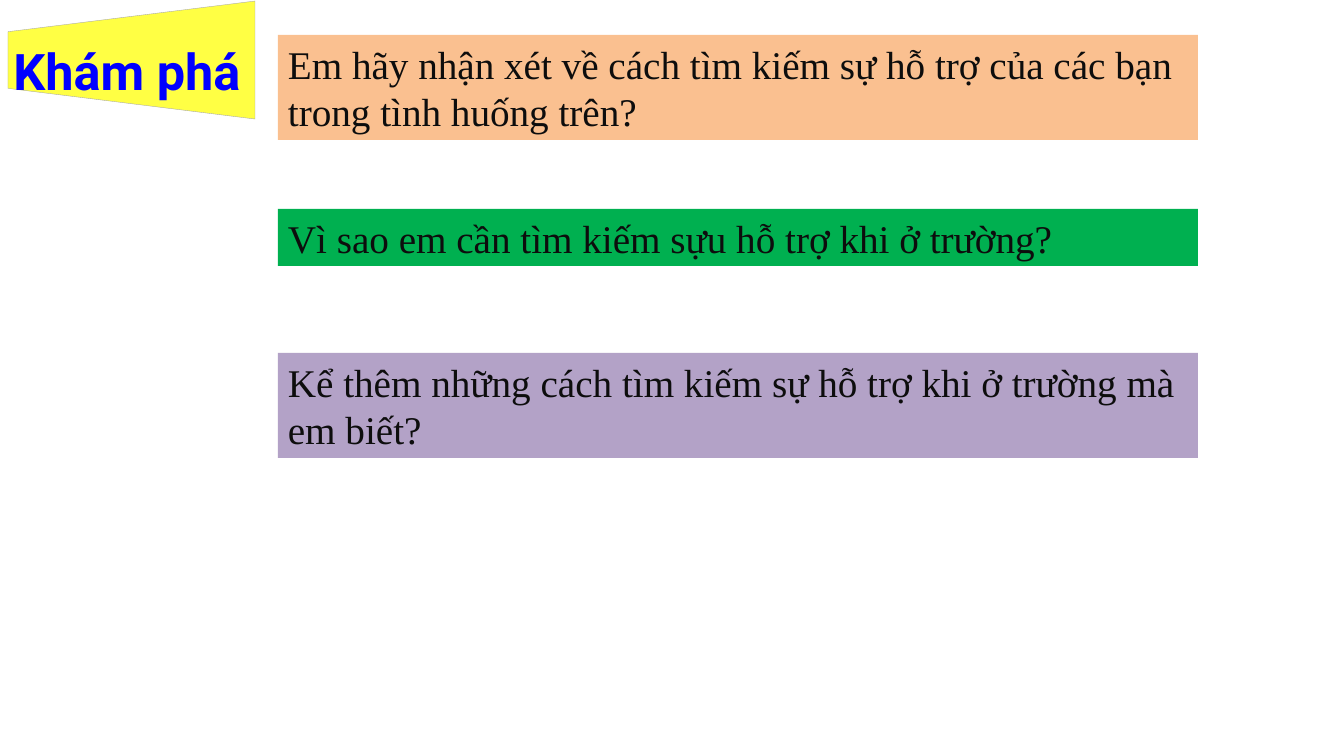
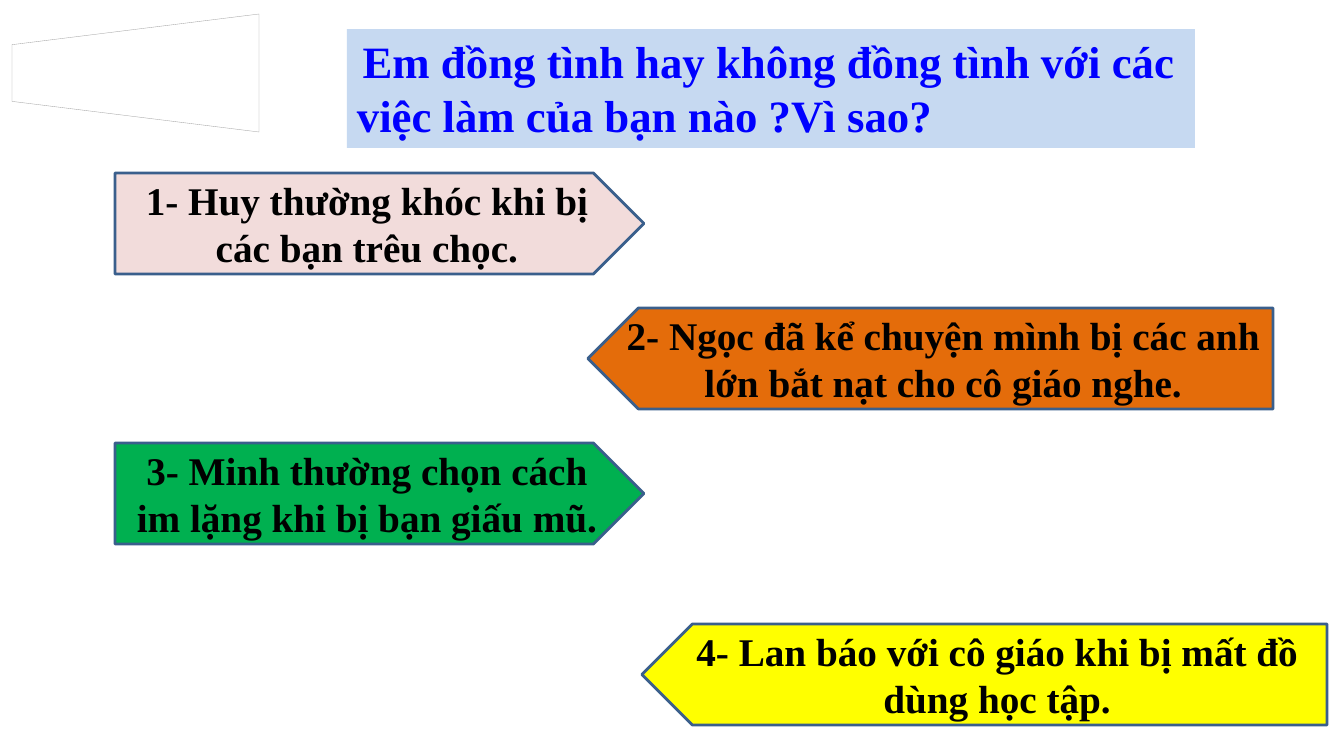
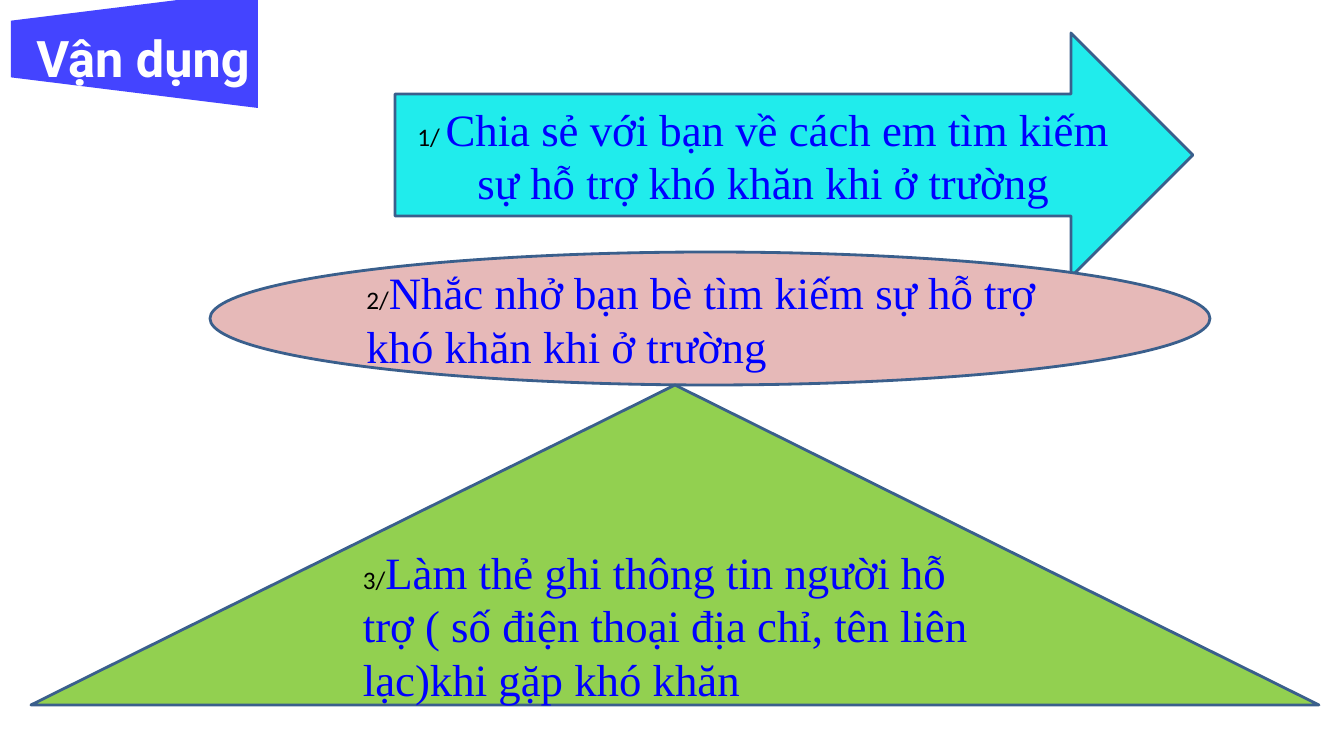
"""Build three lesson slides on seeking help at school."""
from pptx import Presentation
from pptx.dml.color import RGBColor
from pptx.enum import shapes, text
from pptx.util import Emu, Pt

SLIDE_WIDTH, SLIDE_HEIGHT = 1344, 756
EMU_PER_PX = 914400 / 100.8
SERIF, SANS, HEADING = "Times New Roman", "Calibri", "Roboto"
BLUE, BLACK, INK, WHITE = "0000FF", "000000", "0D0D0D", "FFFFFF"
OUTLINE, HAIRLINE = "3A5F8C", "A6A6A6"
GREEN = "00B050"
TAG_LENGTH, TAG_BREADTH, TAG_TAPER = 247, 118, 0.26
KIND = shapes.MSO_SHAPE
LEFT, CENTER = text.PP_ALIGN.LEFT, text.PP_ALIGN.CENTER
TOP, MIDDLE = text.MSO_ANCHOR.TOP, text.MSO_ANCHOR.MIDDLE


def px(length):
    """Turn pixels into EMU."""
    return Emu(round(length * EMU_PER_PX))


def rgb(value):
    """Turn a hex string into a colour."""
    return RGBColor.from_string(value)


def write(holder, words, size=28, font=SERIF, color=BLACK, bold=False,
          align=LEFT, anchor=MIDDLE, lead=""):
    """Write words, after an optional small lead, into a shape."""
    frame = holder.text_frame
    frame.word_wrap = True
    frame.vertical_anchor = anchor
    paragraph = frame.paragraphs[0]
    paragraph.alignment = align
    runs = [(lead, 18, SANS, BLACK, False)] if lead else []
    runs.append((words, size, font, color, bold))
    for content, points, face, ink, heavy in runs:
        run = paragraph.add_run()
        run.text = content
        run.font.size = Pt(points)
        run.font.name = face
        run.font.bold = heavy
        run.font.color.rgb = rgb(ink)


def add_figure(slide, kind, box, fill, line=None, weight=2):
    """Add a filled preset shape, outlined when a line colour is given."""
    figure = slide.shapes.add_shape(kind, *map(px, box))
    figure.shadow.inherit = False
    figure.fill.solid()
    figure.fill.fore_color.rgb = rgb(fill)
    if line:
        figure.line.color.rgb = rgb(line)
        figure.line.width = Pt(weight)
    else:
        figure.line.fill.background()
    return figure


def add_tag(slide, left, top, fill, line=HAIRLINE):
    """Add the sideways trapezoid in the slide's corner."""
    turn = (TAG_LENGTH - TAG_BREADTH) / 2
    box = (left + turn, top - turn, TAG_BREADTH, TAG_LENGTH)
    tag = add_figure(slide, KIND.TRAPEZOID, box, fill, line, 0.25)
    tag.adjustments[0] = TAG_TAPER
    tag.rotation = 270


def add_heading(slide, words, left, top, color):
    """Add the section heading over the corner tag."""
    heading = slide.shapes.add_textbox(*map(px, (left, top, 638, 132)))
    write(heading, words, size=36, font=HEADING, color=color, bold=True,
          align=CENTER)


def add_banner(slide, box, fill, words, **style):
    """Add a plain coloured box of text."""
    write(add_figure(slide, KIND.RECTANGLE, box, fill), words,
          anchor=TOP, **style)


def add_case(slide, box, fill, words, points_left=False):
    """Add a pentagon that tells one pupil's case."""
    case = add_figure(slide, KIND.PENTAGON, box, fill, OUTLINE)
    if points_left:
        case._element.spPr.xfrm.set("flipH", "1")
    write(case, words, bold=True, align=CENTER)


def add_task(slide, kind, box, fill, lead, words, align=LEFT):
    """Add an outlined shape holding one numbered task."""
    task = add_figure(slide, kind, box, fill, OUTLINE)
    write(task, words, size=32, color=BLUE, lead=lead, align=align)


def build_explore(slide):
    """Fill the slide of questions."""
    add_tag(slide, 8, 1, "FFFF44")
    add_heading(slide, "Khám phá", -192, 4, BLUE)
    questions = (
        (35, 105, "FAC090", "Em hãy nhận xét về cách tìm kiếm sự hỗ trợ "
                            "của các bạn trong tình huống trên?"),
        (209, 57, GREEN, "Vì sao em cần tìm kiếm sựu hỗ trợ khi ở trường?"),
        (353, 105, "B3A2C7", "Kể thêm những cách tìm kiếm sự hỗ trợ "
                             "khi ở trường mà em biết?"),
    )
    for top, height, fill, words in questions:
        add_banner(slide, (278, top, 920, height), fill, words, color=INK)


def build_opinions(slide):
    """Fill the slide of cases to agree or disagree with."""
    add_tag(slide, 12, 14, WHITE)
    add_banner(slide, (347, 29, 848, 119), "C6D9F1",
               "Em đồng tình hay không đồng tình với các việc làm "
               "của bạn nào ?Vì sao?",
               size=32, color=BLUE, bold=True, lead=" ")
    cases = (
        (115, 173, "F2DCDB", False,
         "1- Huy thường khóc khi bị các bạn trêu chọc."),
        (588, 308, "E46C0A", True,
         "2- Ngọc đã kể chuyện mình bị các anh lớn bắt nạt "
         "cho cô giáo nghe."),
        (115, 443, GREEN, False,
         "3- Minh thường chọn cách im lặng khi bị bạn giấu mũ."),
        (642, 624, "FFFF00", True,
         "4- Lan báo với cô giáo khi bị mất đồ dùng học tập."),
    )
    for left, top, fill, points_left, words in cases:
        width = 685 if points_left else 529
        add_case(slide, (left, top, width, 101), fill, words, points_left)


def build_practice(slide):
    """Fill the slide of tasks."""
    add_tag(slide, 11, -10, "4444FF", line=None)
    add_heading(slide, "Vận dụng", -176, -9, WHITE)
    add_task(slide, KIND.RIGHT_ARROW, (395, 33, 798, 244), "20ECEC", "1/ ",
             "Chia sẻ với bạn về cách em tìm kiếm sự hỗ trợ khó khăn "
             "khi ở trường", align=CENTER)
    add_task(slide, KIND.OVAL, (210, 252, 1000, 133), "E6B9B8", "2/",
             "Nhắc nhở bạn bè tìm kiếm sự hỗ trợ khó khăn khi ở trường")
    add_task(slide, KIND.ISOSCELES_TRIANGLE, (31, 385, 1288, 320), "92D050",
             "3/", "Làm thẻ ghi thông tin người hỗ trợ ( số điện thoại "
                   "địa chỉ, tên liên lạc)khi gặp khó khăn")


def main():
    """Build and save the presentation."""
    deck = Presentation()
    deck.slide_width, deck.slide_height = px(SLIDE_WIDTH), px(SLIDE_HEIGHT)
    for build in (build_explore, build_opinions, build_practice):
        build(deck.slides.add_slide(deck.slide_layouts[6]))
    deck.save("out.pptx")


if __name__ == "__main__":
    main()
